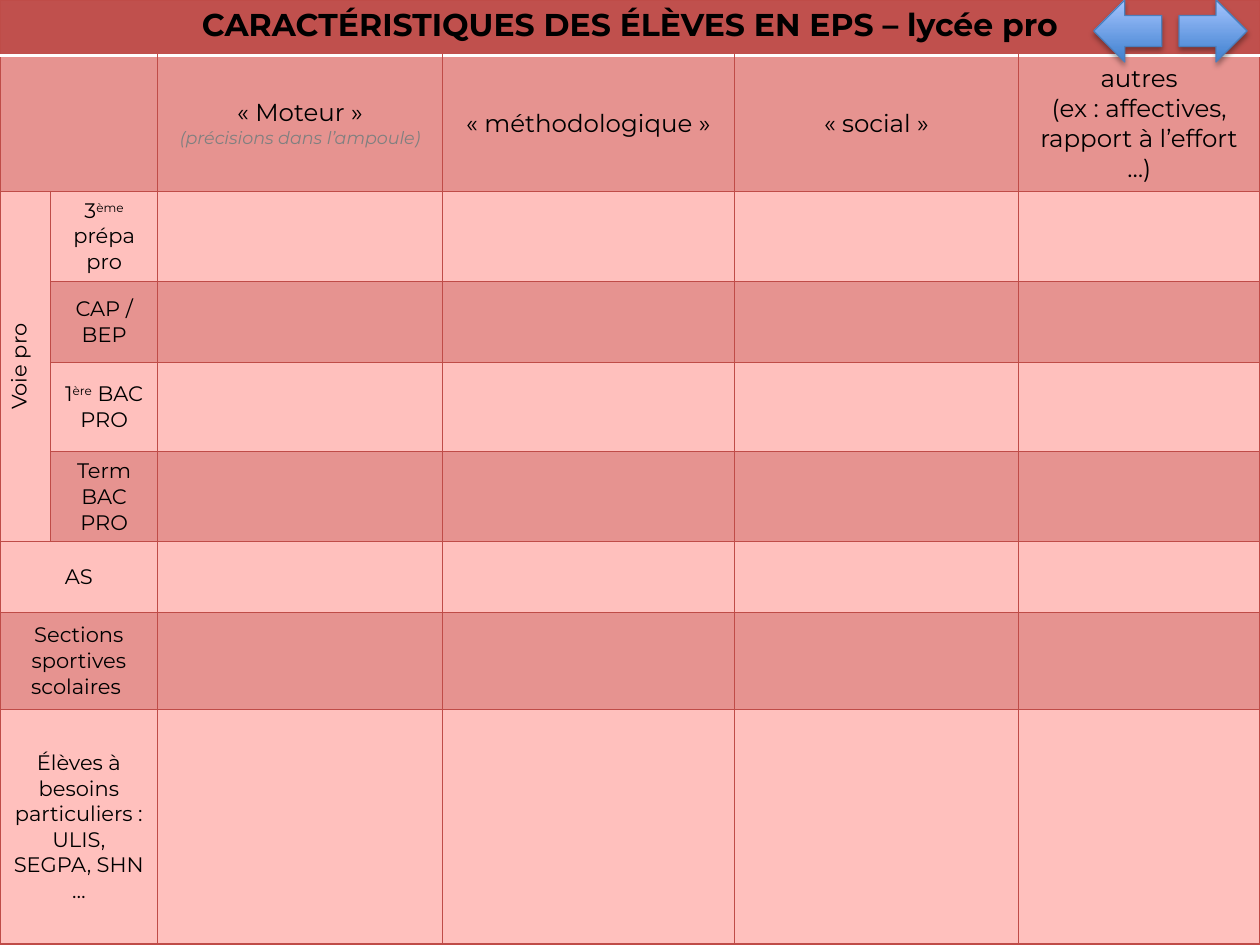
from lxml import etree
from pptx import Presentation
from pptx import util as u
from pptx.dml.color import RGBColor
from pptx.enum import shapes, text
from pptx.oxml import ns

COLORS = {
    "title": "C0504D", "dark": "E69390", "light": "FFC0BD", "border": "BF4C48",
    "white": "FFFFFF", "black": "000000", "grey": "808080",
    "arrow_bottom": "3F80CE", "arrow_top": "A4C4FF", "arrow_line": "4B7EBC",
}
FONT = "Montserrat"
COLUMN_WIDTHS = [1.02, 2.16, 5.74, 5.89, 5.72, 4.87]
ROW_HEIGHTS = [1.12, 2.74, 1.81, 1.63, 1.81, 1.81, 1.42, 1.97, 4.72]
MERGES = [(0, 0, 0, 5), (1, 0, 1, 1), (2, 0, 5, 0),
          (6, 0, 6, 1), (7, 0, 7, 1), (8, 0, 8, 1)]
HEADERS = {
    2: ["« Moteur »"],
    3: ["« méthodologique »"],
    4: ["« social »"],
    5: ["autres", "(ex : affectives, rapport à l’effort …)"],
}
CLASSES = {
    (2, 1): ["3", "ème", " prépa pro"],
    (3, 1): ["CAP / BEP"],
    (4, 1): ["1", "ère", " BAC PRO"],
    (5, 1): ["Term BAC PRO"],
    (2, 0): ["Voie pro"],
    (6, 0): ["AS"],
    (7, 0): ["Sections sportives scolaires "],
    (8, 0): ["Élèves à besoins particuliers : ULIS, SEGPA, SHN …"],
}


def color(name):
    """Return the named colour."""
    return RGBColor.from_string(COLORS[name])


def add_run(paragraph, content, size, shade="black", bold=False, italic=False):
    """Add one formatted run to a centred paragraph."""
    paragraph.alignment = text.PP_ALIGN.CENTER
    run = paragraph.add_run()
    run.text = content
    font = run.font
    font.name, font.size, font.bold, font.italic = FONT, u.Pt(size), bold, italic
    font.color.rgb = color(shade)
    return run


def add_border(cell, side, shade, width):
    """Draw one border of a cell; side is L, R, T or B."""
    properties = cell._tc.get_or_add_tcPr()
    line = etree.SubElement(properties, ns.qn(f"a:ln{side}"), w=str(u.Pt(width)))
    fill = etree.SubElement(line, ns.qn("a:solidFill"))
    etree.SubElement(fill, ns.qn("a:srgbClr"), val=COLORS[shade])


def style_cell(cell, row, column):
    """Give a cell its borders and its band colour."""
    for side in "LRTB":
        under_title = (row, side) in [(0, "B"), (1, "T")]
        add_border(cell, side, *(("white", 2) if under_title else ("border", 0.75)))
    in_track = column == 0 and 2 <= row <= 5
    band = "title" if row == 0 else "dark" if row % 2 and not in_track else "light"
    cell.fill.solid()
    cell.fill.fore_color.rgb = color(band)


def add_grid(slide):
    """Add the styled, merged and empty table."""
    frame = slide.shapes.add_table(
        len(ROW_HEIGHTS), len(COLUMN_WIDTHS), 0, 0,
        u.Cm(sum(COLUMN_WIDTHS)), u.Cm(sum(ROW_HEIGHTS)))
    table = frame.table
    table.first_row = table.horz_banding = False
    for column, width in zip(table.columns, COLUMN_WIDTHS):
        column.width = u.Cm(width)
    for row, height in zip(table.rows, ROW_HEIGHTS):
        row.height = u.Cm(height)
    for top, left, bottom, right in MERGES:
        table.cell(top, left).merge(table.cell(bottom, right))
    for row in range(len(ROW_HEIGHTS)):
        for column in range(len(COLUMN_WIDTHS)):
            style_cell(table.cell(row, column), row, column)
    return table


def fill_headers(table):
    """Write the title and the column headings."""
    add_run(table.cell(0, 0).text_frame.paragraphs[0],
            "CARACTÉRISTIQUES DES ÉLÈVES EN EPS – lycée pro", 18, bold=True)
    for column, lines in HEADERS.items():
        cell = table.cell(1, column)
        cell.vertical_anchor = text.MSO_ANCHOR.MIDDLE
        for index, line in enumerate(lines):
            frame = cell.text_frame
            paragraph = frame.add_paragraph() if index else frame.paragraphs[0]
            add_run(paragraph, line, 14)
    add_run(table.cell(1, 2).text_frame.add_paragraph(),
            "(précisions dans l’ampoule)", 10, "grey", italic=True)


def fill_classes(table):
    """Write the row labels, with raised ordinals and a vertical track name."""
    for position, parts in CLASSES.items():
        cell = table.cell(*position)
        cell.vertical_anchor = text.MSO_ANCHOR.MIDDLE
        for part in parts:
            run = add_run(cell.text_frame.paragraphs[0], part, 12)
            if part in ("ème", "ère"):
                run._r.get_or_add_rPr().set("baseline", "30000")
    table.cell(2, 0)._tc.get_or_add_tcPr().set("vert", "vert270")


def add_arrow(slide, kind, left):
    """Add a navigation arrow with a gradient and a soft shadow."""
    arrow = slide.shapes.add_shape(kind, u.Cm(left), 0, u.Cm(1.37), u.Cm(1.25))
    arrow.fill.gradient()
    arrow.fill.gradient_angle = 90
    for stop, shade, place in zip(arrow.fill.gradient_stops,
                                  ("arrow_bottom", "arrow_top"), (0, 1)):
        stop.color.rgb = color(shade)
        stop.position = place
    arrow.line.color.rgb = color("arrow_line")
    arrow.line.width = u.Pt(0.75)
    arrow.shadow.inherit = False
    effects = arrow._element.spPr.find(ns.qn("a:effectLst"))
    shadow = etree.SubElement(
        effects, ns.qn("a:outerShdw"), blurRad=str(u.Pt(3.1)),
        dist=str(u.Pt(1.8)), dir="5400000", rotWithShape="0")
    shade = etree.SubElement(shadow, ns.qn("a:srgbClr"), val=COLORS["black"])
    etree.SubElement(shade, ns.qn("a:alpha"), val="35000")


def main():
    """Build and save the slide."""
    presentation = Presentation()
    presentation.slide_width, presentation.slide_height = u.Cm(25.4), u.Cm(19.05)
    slide = presentation.slides.add_slide(presentation.slide_layouts[6])
    table = add_grid(slide)
    fill_headers(table)
    fill_classes(table)
    add_arrow(slide, shapes.MSO_SHAPE.LEFT_ARROW, 22.05)
    add_arrow(slide, shapes.MSO_SHAPE.RIGHT_ARROW, 23.77)
    presentation.save("out.pptx")


if __name__ == "__main__":
    main()
